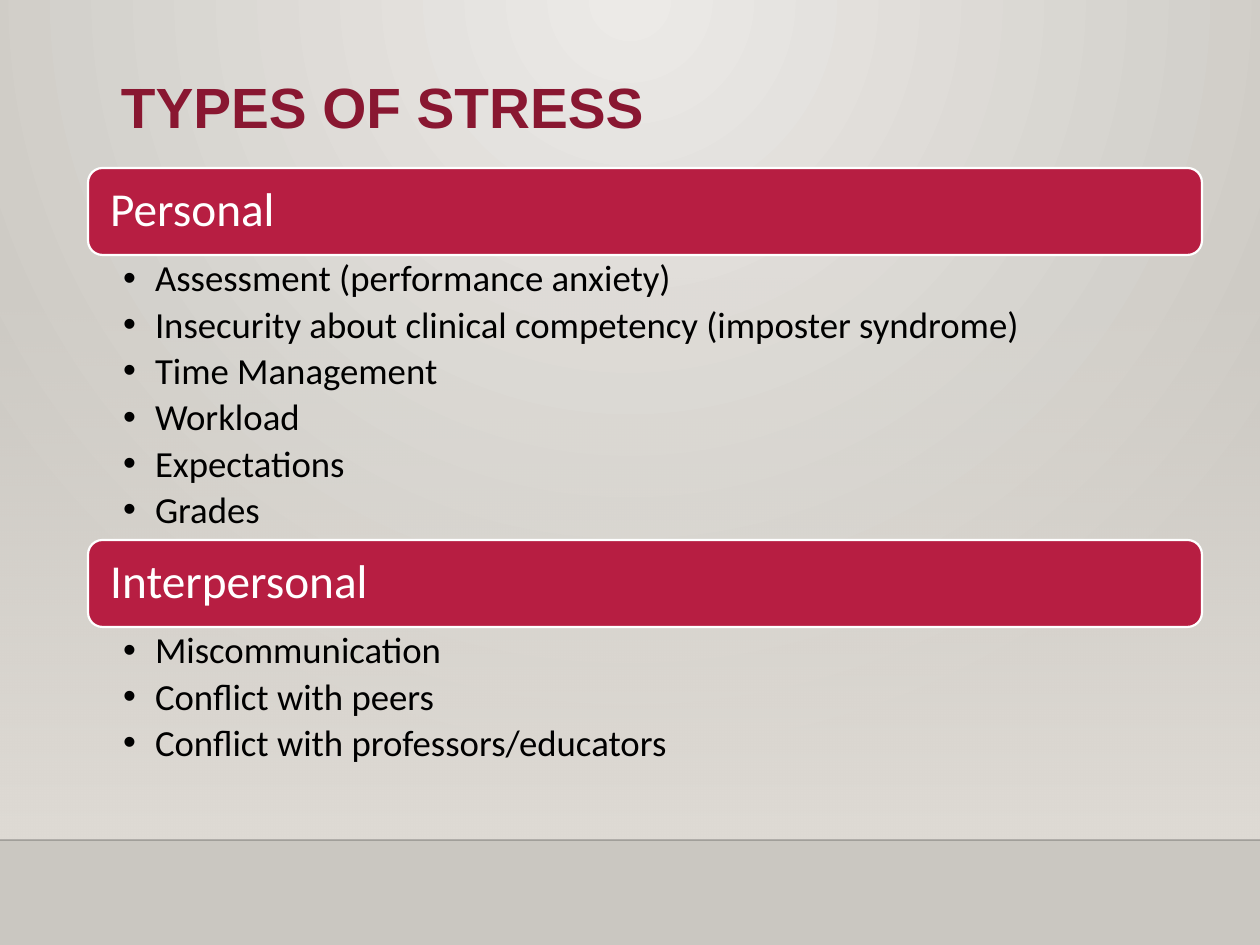
import lxml.etree
import pptx
import pptx.dml.color
import pptx.enum.shapes
import pptx.enum.text
import pptx.oxml.ns
import pptx.util

PX = pptx.util.Inches(1) / 126
COLORS = {
    "glow": "ECEAE7",
    "floor": "CAC7C1",
    "panel": "DFDBD5",
    "rule": "000001",
    "title": "891731",
    "band": "B71E42",
    "white": "FFFFFF",
    "text": "000000",
}
BAND_HEIGHT = 87
SECTIONS = [
    ("Personal", (88, 168, 1114, 372), [
        "Assessment (performance anxiety)",
        "Insecurity about clinical competency (imposter syndrome)",
        "Time Management",
        "Workload",
        "Expectations",
        "Grades",
    ]),
    ("Interpersonal", (88, 540, 1114, 230), [
        "Miscommunication",
        "Conflict with peers",
        "Conflict with professors/educators",
    ]),
]


def px(length):
    return pptx.util.Emu(round(length * PX))


def color(name):
    return pptx.dml.color.RGBColor.from_string(COLORS[name])


def add_element(parent, tag, **attributes):
    element = lxml.etree.SubElement(parent, pptx.oxml.ns.qn(tag))
    for name, value in attributes.items():
        element.set(name, str(value))
    return element


def find_element(parent, tag):
    return parent.find(".//" + pptx.oxml.ns.qn(tag))


def set_gradient(fill, start, end):
    fill.gradient()
    for stop, name in zip(fill.gradient_stops, (start, end)):
        stop.color.rgb = color(name)


def set_font(font, name, size, color_name, bold=False):
    font.name = name
    font.size = pptx.util.Pt(size)
    font.bold = bold
    font.color.rgb = color(color_name)


def place(shape, box):
    shape.left, shape.top, shape.width, shape.height = map(px, box)


def set_frame(frame, anchor, insets):
    frame.word_wrap = True
    frame.auto_size = pptx.enum.text.MSO_AUTO_SIZE.NONE
    frame.vertical_anchor = anchor
    (frame.margin_left, frame.margin_top,
     frame.margin_right, frame.margin_bottom) = map(px, insets)


def set_spacing(paragraph, after=0):
    paragraph.alignment = pptx.enum.text.PP_ALIGN.LEFT
    paragraph.line_spacing = 0.9
    paragraph.space_before = pptx.util.Pt(0)
    paragraph.space_after = pptx.util.Pt(after)


def add_backdrop(slide, box):
    left, top, width, height = box

    # Radial glow from the top centre
    set_gradient(slide.background.fill, "glow", "floor")
    gradient = find_element(slide.background._cSld, "a:gradFill")
    gradient.remove(find_element(gradient, "a:lin"))
    circle = add_element(gradient, "a:path", path="circle")
    add_element(circle, "a:fillToRect", l=43000, t=0, r=43000, b=100000)

    # Panel that fades in downwards
    panel = slide.shapes.add_shape(
        pptx.enum.shapes.MSO_SHAPE.RECTANGLE, *map(px, box))
    panel.shadow.inherit = False
    panel.line.fill.background()
    set_gradient(panel.fill, "panel", "panel")
    panel.fill.gradient_angle = 270
    add_element(find_element(panel._element, "a:srgbClr"), "a:alpha", val=0)

    # Thin rule along the panel's lower edge
    rule = slide.shapes.add_connector(
        pptx.enum.shapes.MSO_CONNECTOR.STRAIGHT,
        px(left), px(top + height), px(left + width), px(top + height))
    rule.line.width = pptx.util.Pt(1)
    rule.line.color.rgb = color("rule")
    add_element(find_element(rule._element, "a:srgbClr"), "a:alpha", val=20000)
    add_element(rule._element.spPr, "a:effectLst")

    # Behind the placeholders
    for part in (rule, panel):
        slide.shapes._spTree.insert(2, part._element)


def fill_title(title, box, text):
    place(title, box)
    set_frame(title.text_frame, pptx.enum.text.MSO_ANCHOR.MIDDLE, (13, 6, 13, 6))
    title.text_frame.text = text
    paragraph = title.text_frame.paragraphs[0]
    set_spacing(paragraph)
    set_font(paragraph.font, "Arial", 32.4, "title", bold=True)


def add_section(slide, body, box, heading, items):
    left, top, width, height = box

    # Heading band
    band = slide.shapes.add_shape(
        pptx.enum.shapes.MSO_SHAPE.ROUNDED_RECTANGLE,
        px(left), px(top), px(width), px(BAND_HEIGHT))
    band.shadow.inherit = False
    band.fill.solid()
    band.fill.fore_color.rgb = color("band")
    band.line.color.rgb = color("white")
    band.line.width = pptx.util.Pt(1.25)
    set_frame(band.text_frame, pptx.enum.text.MSO_ANCHOR.MIDDLE, (18, 14, 18, 14))
    band.text_frame.text = heading
    paragraph = band.text_frame.paragraphs[0]
    set_spacing(paragraph)
    set_font(paragraph.font, "Calibri", 27, "white")

    # Bulleted list under the band
    place(body, (left, top + BAND_HEIGHT, width, height - BAND_HEIGHT))
    set_frame(body.text_frame, pptx.enum.text.MSO_ANCHOR.TOP, (35, 5, 26, 5))
    body.text_frame.text = "\n".join(items)
    for paragraph in body.text_frame.paragraphs:
        set_spacing(paragraph, after=3.8)
        properties = paragraph._p.get_or_add_pPr()
        properties.set("marL", str(px(32)))
        properties.set("indent", str(px(-32)))
        add_element(properties, "a:buFont", typeface="Arial")
        add_element(properties, "a:buChar", char="•")
        set_font(paragraph.font, "Calibri", 21, "text")


def main():
    presentation = pptx.Presentation()
    presentation.slide_width = px(1260)
    presentation.slide_height = px(945)
    slide = presentation.slides.add_slide(
        presentation.slide_layouts.get_by_name("Two Content"))
    title, *bodies = slide.placeholders

    add_backdrop(slide, (0, 278, 1260, 562))
    fill_title(title, (108, 77, 1009, 67), "TYPES OF STRESS")
    for body, (heading, box, items) in zip(bodies, SECTIONS):
        add_section(slide, body, box, heading, items)

    presentation.save("out.pptx")


if __name__ == "__main__":
    main()
